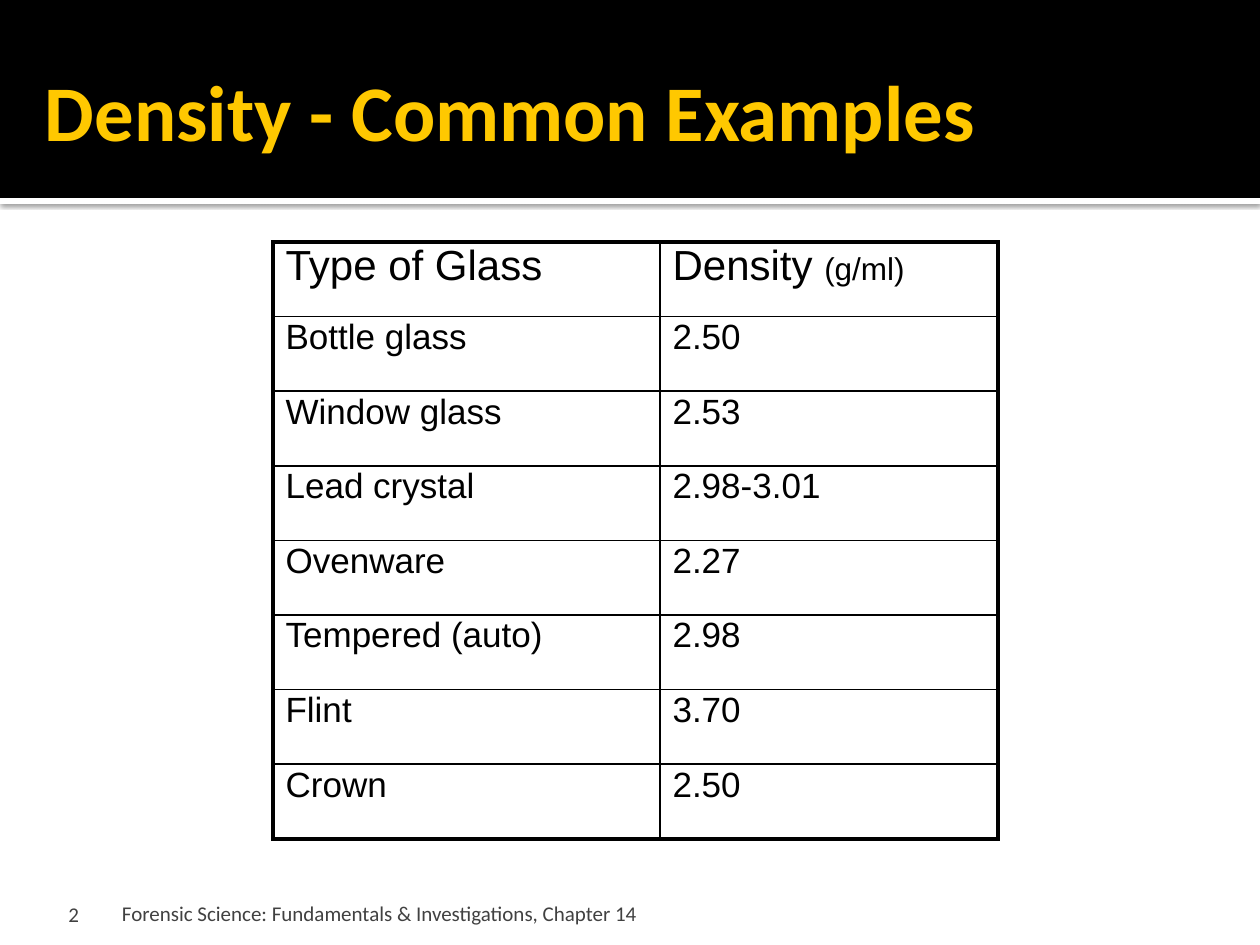
from lxml.etree import SubElement
from pptx import Presentation
from pptx.dml.color import RGBColor
from pptx.enum.shapes import MSO_SHAPE
from pptx.enum.text import MSO_ANCHOR, MSO_AUTO_SIZE, PP_ALIGN
from pptx.oxml.ns import qn
from pptx.util import Emu, Pt

EMU_PER_PX = 914400 / 126
COLORS = {"black": "000000", "white": "FFFFFF", "gold": "FFC800", "gray": "414141"}
THIN, THICK = 1, 2.25

GLASS_DENSITIES = [
    ("Bottle glass", "2.50"),
    ("Window glass", "2.53"),
    ("Lead crystal", "2.98-3.01"),
    ("Ovenware", "2.27"),
    ("Tempered (auto)", "2.98"),
    ("Flint", "3.70"),
    ("Crown", "2.50"),
]


def px(length):
    return Emu(round(length * EMU_PER_PX))


def add_run(paragraph, text, size, font="Arial", color="black", bold=False):
    run = paragraph.add_run()
    run.text = text
    run.font.name = font
    run.font.size = Pt(size)
    run.font.bold = bold
    run.font.color.rgb = RGBColor.from_string(COLORS[color])


def set_border(cell, side, width):
    line = SubElement(cell._tc.get_or_add_tcPr(), qn(f"a:ln{side}"), w=str(Pt(width)))
    fill = SubElement(line, qn("a:solidFill"))
    SubElement(fill, qn("a:srgbClr"), val=COLORS["black"])


class SlideBuilder:
    def __init__(self, slide, font="Calibri"):
        self.slide = slide
        self.font = font

    def place(self, shape, left, top, width, height):
        shape.left, shape.top = px(left), px(top)
        shape.width, shape.height = px(width), px(height)

    def set_frame(self, shape, anchor, insets):
        frame = shape.text_frame
        frame.word_wrap = True
        frame.auto_size = MSO_AUTO_SIZE.NONE
        frame.vertical_anchor = anchor
        (frame.margin_left, frame.margin_top,
         frame.margin_right, frame.margin_bottom) = map(px, insets)
        return frame.paragraphs[0]

    def band(self, top, height, color, shadow=False):
        shape = self.slide.shapes.add_shape(
            MSO_SHAPE.RECTANGLE, 0, px(top), px(1260), px(height))
        shape.shadow.inherit = False
        shape.fill.solid()
        shape.fill.fore_color.rgb = RGBColor.from_string(COLORS[color])
        shape.line.fill.background()
        if shadow:
            effects = shape._element.spPr.find(qn("a:effectLst"))
            outer = SubElement(effects, qn("a:outerShdw"), blurRad=str(Pt(2.5)),
                               dist=str(Pt(0.8)), dir="5400000", rotWithShape="0")
            tint = SubElement(outer, qn("a:srgbClr"), val=COLORS["black"])
            SubElement(tint, qn("a:alpha"), val="60000")

    def title(self, text, *box):
        shape = self.slide.shapes.title
        # Bring the title in front of the bands
        self.slide.shapes._spTree.append(shape._element)
        self.place(shape, *box)
        paragraph = self.set_frame(shape, MSO_ANCHOR.MIDDLE, (13, 6, 6, 6))
        paragraph.alignment = PP_ALIGN.LEFT
        add_run(paragraph, text, 45, self.font, "gold", bold=True)

    def footer(self, text, *box, side_inset, align=PP_ALIGN.LEFT):
        shape = self.slide.shapes.add_textbox(*map(px, box))
        paragraph = self.set_frame(shape, MSO_ANCHOR.BOTTOM, (side_inset, 6, side_inset, 0))
        paragraph.alignment = align
        add_run(paragraph, text, 12, self.font, "gray")

    def table(self, rows, left, top, column_widths, height):
        frame = self.slide.shapes.add_table(
            len(rows), len(column_widths), px(left), px(top),
            px(sum(column_widths)), px(height))
        table = frame.table
        table.first_row = table.horz_banding = False
        for column, width in zip(table.columns, column_widths):
            column.width = px(width)
        last_row, last_column = len(rows) - 1, len(column_widths) - 1
        for i, row in enumerate(rows):
            table.rows[i].height = px(height / len(rows))
            for j, runs in enumerate(row):
                cell = table.cell(i, j)
                paragraph = cell.text_frame.paragraphs[0]
                paragraph.line_spacing = 0.85
                for text, size in runs:
                    add_run(paragraph, text, size)
                # Thick outer frame, thin inner grid
                outer_sides = {"L": j == 0, "R": j == last_column,
                               "T": i == 0, "B": i == last_row}
                for side, is_outer in outer_sides.items():
                    set_border(cell, side, THICK if is_outer else THIN)
                cell.fill.background()


def main():
    presentation = Presentation()
    presentation.slide_width, presentation.slide_height = px(1260), px(945)
    builder = SlideBuilder(presentation.slides.add_slide(presentation.slide_layouts[5]))

    # Header
    builder.band(198, 6, "white", shadow=True)
    builder.band(0, 198, "black")

    # Footer and slide number
    builder.footer("Forensic Science: Fundamentals & Investigations, Chapter 14",
                   116, 861, 1166, 65, side_inset=6)
    builder.footer("2", 11, 861, 81, 66, side_inset=13, align=PP_ALIGN.RIGHT)

    builder.title("Density - Common Examples", 32, 32, 1092, 157)

    # Density table
    header = [[("Type of Glass", 24)], [("Density ", 24), ("(g/ml)", 18)]]
    body = [[[(text, 20)] for text in row] for row in GLASS_DENSITIES]
    builder.table([header] + body, 273, 242, (387, 338), 597)

    presentation.save("out.pptx")


if __name__ == "__main__":
    main()
